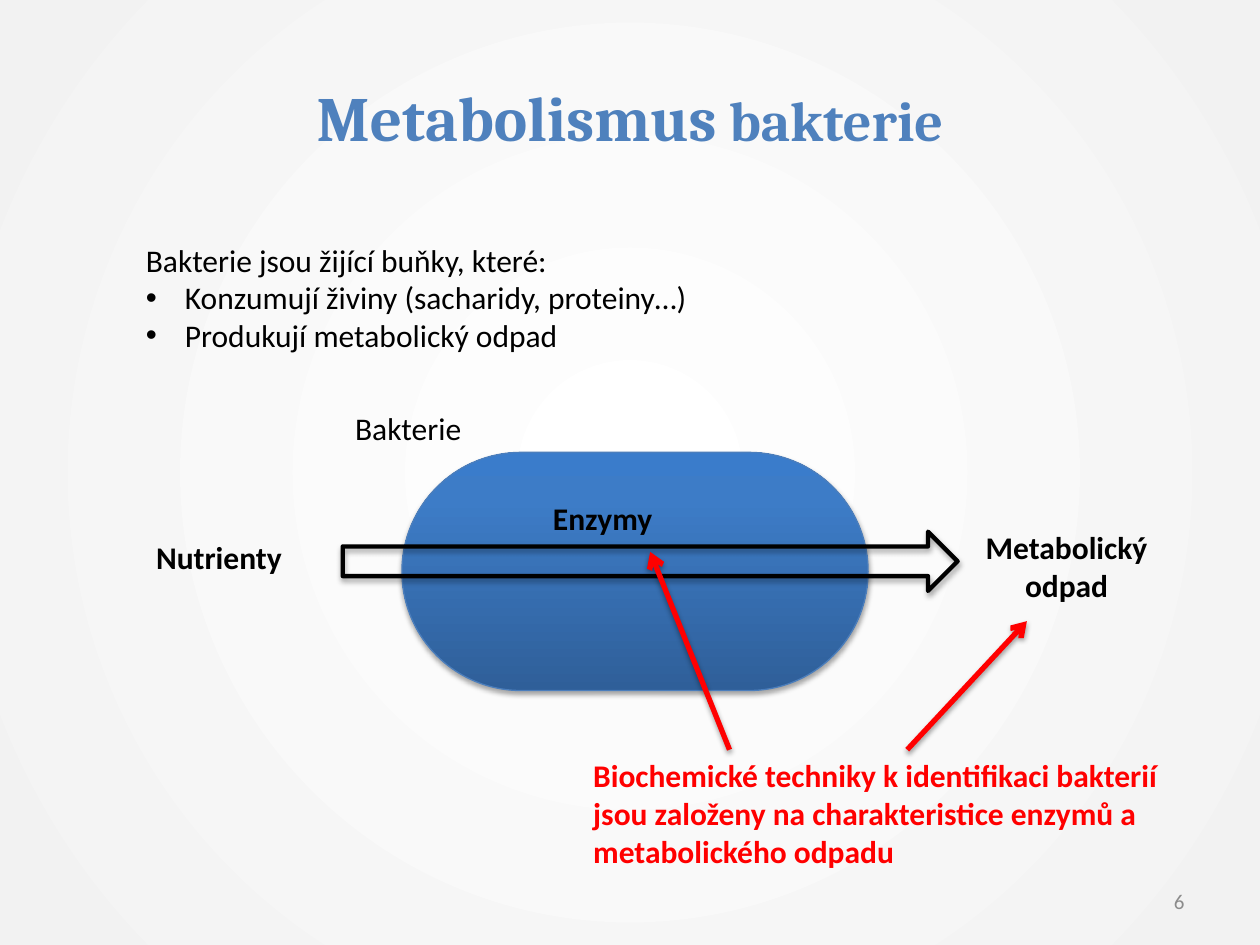
from dataclasses import dataclass, field

from lxml import etree
from pptx import Presentation
from pptx.dml.color import RGBColor
from pptx.enum.shapes import MSO_CONNECTOR, MSO_SHAPE
from pptx.enum.text import MSO_ANCHOR, MSO_AUTO_SIZE, PP_ALIGN
from pptx.oxml import parse_xml
from pptx.oxml.ns import nsdecls, qn
from pptx.util import Inches, Pt

ROUNDED, ARROW = MSO_SHAPE.ROUNDED_RECTANGLE, MSO_SHAPE.RIGHT_ARROW
STRAIGHT = MSO_CONNECTOR.STRAIGHT
LEFT, CENTER, RIGHT = PP_ALIGN.LEFT, PP_ALIGN.CENTER, PP_ALIGN.RIGHT
TOP, MIDDLE = MSO_ANCHOR.TOP, MSO_ANCHOR.MIDDLE
NO_FIT = MSO_AUTO_SIZE.NONE

COLORS = {
    "title": "4F81BD", "ink": "000000", "accent": "FF0000", "number": "8C8C8C",
    "cell_line": "4B7EBC", "cell_dark": "2F5F99", "cell_light": "3D7CC7",
    "cell_top": "3A7CCB", "page_center": "FFFFFF", "page_edge": "F2F2F2",
}
BODY = {"name": "Calibri", "size": Pt(18), "bold": False}
STRONG = BODY | {"bold": True}
HEADING = {"name": "Cambria", "size": Pt(36), "bold": True}
SMALL = BODY | {"size": Pt(12)}


@dataclass
class Span:
    text: str
    style: dict = field(default_factory=lambda: BODY)
    color: str = "ink"


@dataclass
class Para:
    spans: list[Span]
    bullet: bool = False


@dataclass
class Label:
    place: tuple[float, float, float, float]
    paras: list[Para]
    align: PP_ALIGN = LEFT
    anchor: MSO_ANCHOR = TOP
    wrap: bool = True


@dataclass
class Pointer:
    start: tuple[float, float]
    end: tuple[float, float]


LABELS = [
    Label((0.5, 0.3, 9, 1.25), [Para([
        Span("Metabolismus", HEADING, "title"),
        Span(" bakterie", HEADING | {"size": Pt(32)}, "title"),
    ])], CENTER, MIDDLE),
    Label((1.14, 4.22, 1.21, 0.4), [Para([Span("Nutrienty", STRONG)])], wrap=False),
    Label((7.52, 4.14, 1.89, 0.71), [Para([Span("Metabolický odpad", STRONG)])], CENTER),
    Label((4.29, 3.91, 1, 0.4), [Para([Span("Enzymy", STRONG)])], wrap=False),
    Label((2.72, 3.2, 1.05, 0.4), [Para([Span("Bakterie")])], wrap=False),
    Label((4.61, 5.95, 4.8, 1.01), [Para([Span(
        "Biochemické techniky k identifikaci bakterií jsou založeny "
        "na charakteristice enzymů a metabolického odpadu", STRONG, "accent")])]),
    Label((1.06, 1.86, 4.54, 1.01), [
        Para([Span("Bakterie jsou žijící buňky, které:")]),
        Para([Span("Konzumují živiny (sacharidy, proteiny…)")], bullet=True),
        Para([Span("Produkují metabolický odpad")], bullet=True),
    ], wrap=False),
    Label((7.17, 6.95, 2.33, 0.4), [Para([Span("6", SMALL, "number")])], RIGHT, MIDDLE),
]
POINTERS = [Pointer((7.2, 5.95), (8.15, 4.93)), Pointer((5.79, 5.95), (5.16, 4.38))]


def rgb(name: str) -> RGBColor:
    return RGBColor.from_string(COLORS[name])


def set_gradient(fill, owner, stops: list[tuple[int, str]], direction: str) -> None:
    fill.gradient()
    old = next(owner.iter(qn("a:gradFill")))
    stop_xml = "".join(
        f'<a:gs pos="{position * 1000}"><a:srgbClr val="{COLORS[name]}"/></a:gs>'
        for position, name in stops)
    new = parse_xml(f'<a:gradFill {nsdecls("a")} rotWithShape="1">'
                    f'<a:gsLst>{stop_xml}</a:gsLst>{direction}</a:gradFill>')
    old.getparent().replace(old, new)


def add_shadow(shape, opacity: int, distance: float) -> None:
    properties = shape.element.spPr
    for old in properties.findall(qn("a:effectLst")):
        properties.remove(old)
    properties.append(parse_xml(
        f'<a:effectLst {nsdecls("a")}><a:outerShdw blurRad="{Pt(3.1)}" '
        f'dist="{Pt(distance)}" dir="5400000" rotWithShape="0">'
        f'<a:srgbClr val="{COLORS["ink"]}"><a:alpha val="{opacity * 1000}"/>'
        '</a:srgbClr></a:outerShdw></a:effectLst>'))


def set_line(shape, color: str, width: float) -> None:
    shape.line.color.rgb = rgb(color)
    shape.line.width = Pt(width)


def add_bullet(para) -> None:
    properties = para._p.get_or_add_pPr()
    properties.set("marL", str(Inches(0.31)))
    properties.set("indent", str(Inches(-0.31)))
    etree.SubElement(properties, qn("a:buFont"), typeface="Arial")
    etree.SubElement(properties, qn("a:buChar"), char="•")


def add_label(slide, label: Label) -> None:
    box = slide.shapes.add_textbox(*map(Inches, label.place))
    frame = box.text_frame
    settings = {"word_wrap": label.wrap, "auto_size": NO_FIT, "vertical_anchor": label.anchor}
    for name, value in settings.items():
        setattr(frame, name, value)
    for index, item in enumerate(label.paras):
        para = frame.add_paragraph() if index else frame.paragraphs[0]
        para.alignment = label.align
        if item.bullet:
            add_bullet(para)
        for span in item.spans:
            run = para.add_run()
            run.text = span.text
            for name, value in span.style.items():
                setattr(run.font, name, value)
            run.font.color.rgb = rgb(span.color)


def add_cell(slide) -> None:
    cell = slide.shapes.add_shape(ROUNDED, *map(Inches, (3.19, 3.59, 3.7, 1.89)))
    cell.adjustments[0] = 0.5
    set_gradient(cell.fill, cell.element,
                 [(0, "cell_dark"), (80, "cell_light"), (100, "cell_top")],
                 '<a:lin ang="16200000" scaled="0"/>')
    set_line(cell, "cell_line", 0.75)
    add_shadow(cell, 35, 1.8)


def add_flow_arrow(slide) -> None:
    arrow = slide.shapes.add_shape(ARROW, *map(Inches, (2.72, 4.22, 4.88, 0.47)))
    arrow.fill.background()
    set_line(arrow, "ink", 2.5)
    add_shadow(arrow, 35, 1.8)


def add_pointer(slide, pointer: Pointer) -> None:
    ends = map(Inches, pointer.start + pointer.end)
    connector = slide.shapes.add_connector(STRAIGHT, *ends)
    set_line(connector, "accent", 3)
    outline = connector.element.spPr.find(qn("a:ln"))
    etree.SubElement(outline, qn("a:tailEnd"), type="arrow")
    add_shadow(connector, 38, 1.6)


def main() -> None:
    deck = Presentation()
    deck.slide_width, deck.slide_height = Inches(10), Inches(7.5)
    slide = deck.slides.add_slide(deck.slide_layouts[6])
    set_gradient(slide.background.fill, slide.element,
                 [(0, "page_center"), (100, "page_edge")],
                 '<a:path path="circle"><a:fillToRect l="50000" t="50000" '
                 'r="50000" b="50000"/></a:path>')
    add_cell(slide)
    add_flow_arrow(slide)
    for label in LABELS:
        add_label(slide, label)
    for pointer in POINTERS:
        add_pointer(slide, pointer)
    deck.save("out.pptx")


if __name__ == "__main__":
    main()
